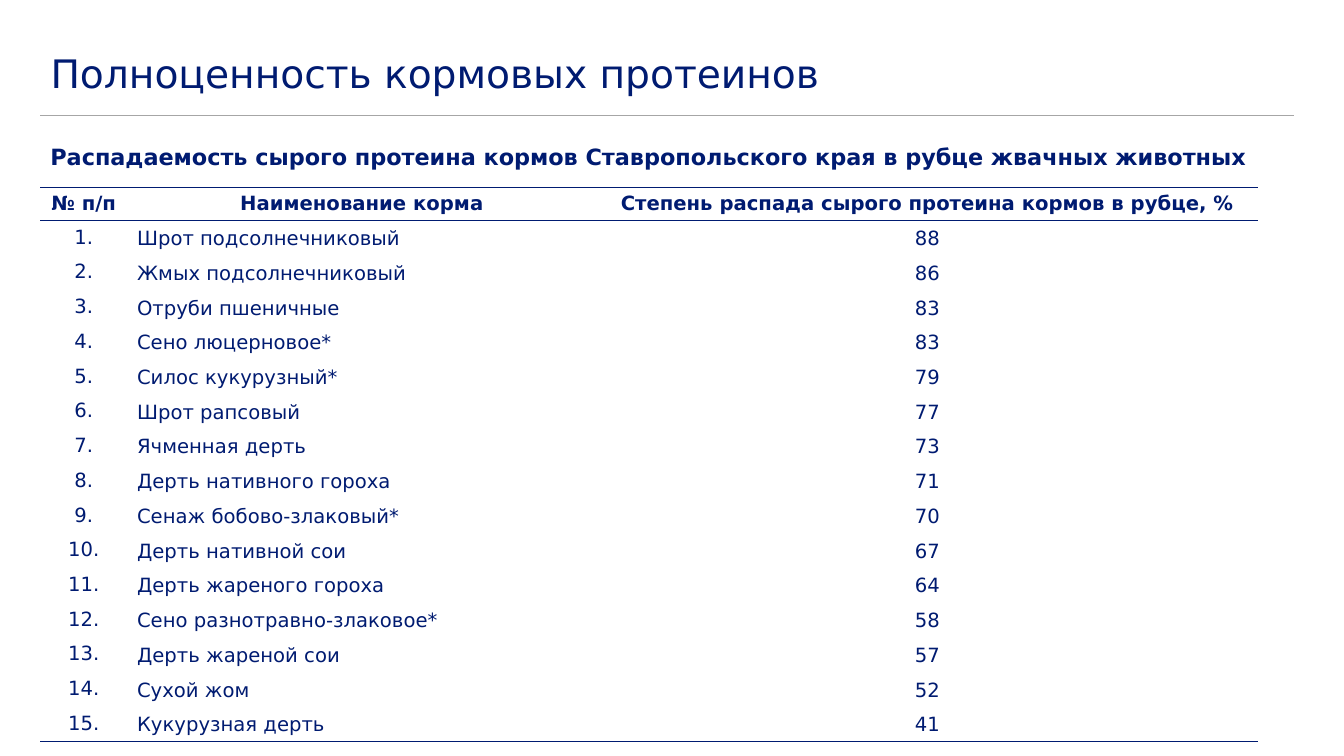
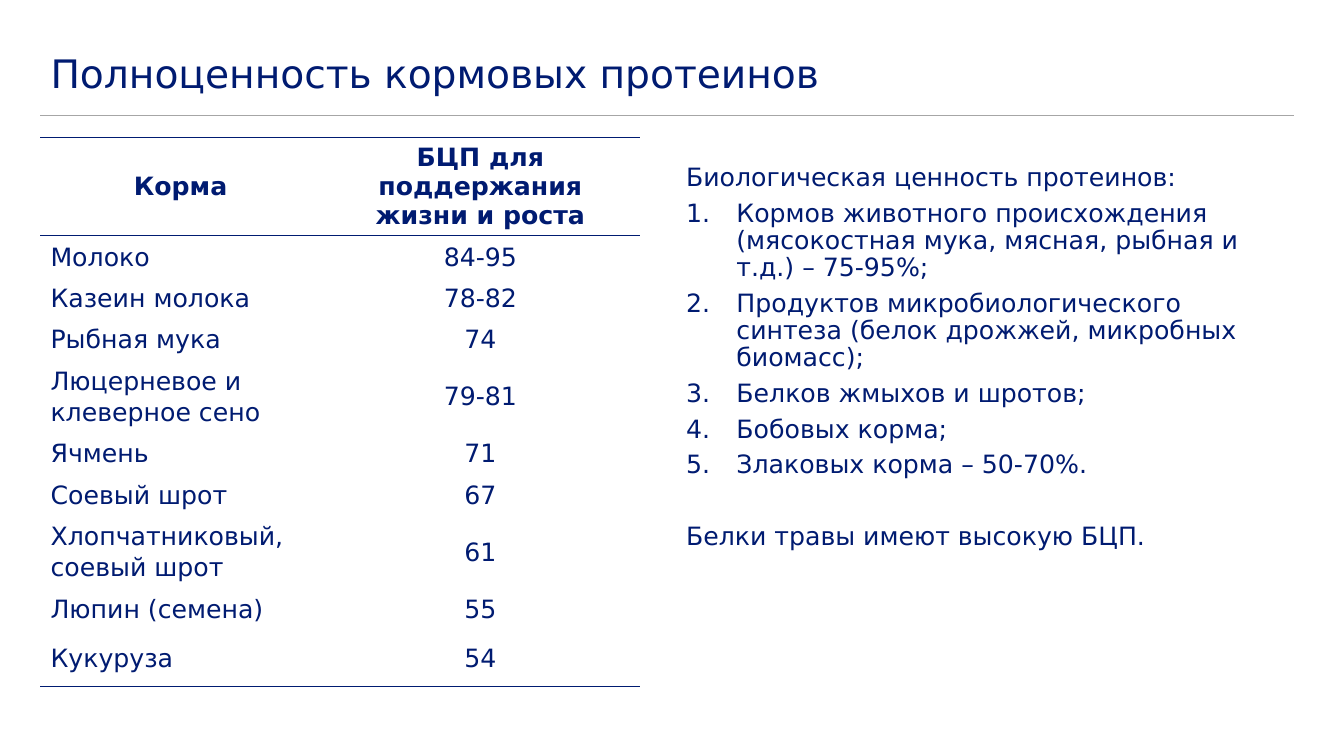
from lxml.etree import SubElement
from pptx import Presentation
from pptx.dml.color import RGBColor
from pptx.enum.shapes import MSO_CONNECTOR, MSO_SHAPE
from pptx.enum.text import MSO_ANCHOR, PP_ALIGN
from pptx.oxml.ns import qn
from pptx.util import Cm, Pt

FONT = "DejaVu Sans"
COLORS = {"navy": "001B71", "rule": "A6A6A6", "panel": "FFFFFF"}
LEFT, WIDTH = 1.02, 31.6
TITLE = "Полноценность кормовых протеинов"
NO_TABLE_STYLE = "{2D5ABB26-0587-4C30-8999-92F81FD0307C}"

SUBTITLE = "Распадаемость сырого протеина кормов Ставропольского края в рубце жвачных животных"
DECAY_HEAD = ("№ п/п", "Наименование корма", "Степень распада сырого протеина кормов в рубце, %")
DECAY = [
    ("Шрот подсолнечниковый", 88),
    ("Жмых подсолнечниковый", 86),
    ("Отруби пшеничные", 83),
    ("Сено люцерновое*", 83),
    ("Силос кукурузный*", 79),
    ("Шрот рапсовый", 77),
    ("Ячменная дерть", 73),
    ("Дерть нативного гороха", 71),
    ("Сенаж бобово-злаковый*", 70),
    ("Дерть нативной сои", 67),
    ("Дерть жареного гороха", 64),
    ("Сено разнотравно-злаковое*", 58),
    ("Дерть жареной сои", 57),
    ("Сухой жом", 52),
    ("Кукурузная дерть", 41),
]

VALUE_HEAD = ("Корма", "БЦП для поддержания жизни и роста")
VALUE = [
    ("Молоко", "84-95"),
    ("Казеин молока", "78-82"),
    ("Рыбная мука", "74"),
    ("Люцерневое и клеверное сено", "79-81"),
    ("Ячмень", "71"),
    ("Соевый шрот", "67"),
    ("Хлопчатниковый, соевый шрот", "61"),
    ("Люпин (семена)", "55"),
    ("Кукуруза", "54"),
]
VALUE_HEIGHTS = [2.45, 1.04, 1.04, 1.04, 1.83, 1.04, 1.04, 1.83, 1.04, 1.45]

RANKING_INTRO = "Биологическая ценность протеинов:"
RANKING = [
    "Кормов животного происхождения (мясокостная мука, мясная, рыбная и т.д.) – 75-95%;",
    "Продуктов микробиологического синтеза (белок дрожжей, микробных биомасс);",
    "Белков жмыхов и шротов;",
    "Бобовых корма;",
    "Злаковых корма – 50-70%.",
]
RANKING_NOTE = "Белки травы имеют высокую БЦП."


def add_run(p, text, size, bold=False):
    r = p.add_run()
    r.text = text
    r.font.name, r.font.size, r.font.bold = FONT, Pt(size), bold
    r.font.color.rgb = RGBColor.from_string(COLORS["navy"])


def add_titled_slide(prs):
    s = prs.slides.add_slide(prs.slide_layouts[5])
    title = s.shapes.title
    title.left, title.top, title.width, title.height = Cm(LEFT), Cm(1.14), Cm(WIDTH), Cm(1.52)
    tf = title.text_frame
    tf.vertical_anchor = MSO_ANCHOR.MIDDLE
    p = tf.paragraphs[0]
    p.alignment, p.line_spacing = PP_ALIGN.LEFT, 0.9
    add_run(p, TITLE, 28)

    rule = s.shapes.add_connector(MSO_CONNECTOR.STRAIGHT, Cm(LEFT), Cm(2.91), Cm(LEFT + WIDTH), Cm(2.91))
    rule.line.color.rgb = RGBColor.from_string(COLORS["rule"])
    rule.line.width = Pt(0.5)
    SubElement(rule._element.spPr, qn("a:effectLst"))
    return s


def add_text_panel(s, left, top, width, height):
    sp = s.shapes.add_shape(MSO_SHAPE.RECTANGLE, Cm(left), Cm(top), Cm(width), Cm(height))
    sp.shadow.inherit = False
    sp.fill.solid()
    sp.fill.fore_color.rgb = RGBColor.from_string(COLORS["panel"])
    sp.line.fill.background()
    tf = sp.text_frame
    tf.word_wrap = True
    tf.vertical_anchor = MSO_ANCHOR.TOP
    return tf


def add_body_paragraph(p, text, size, bold=False):
    p.alignment, p.line_spacing, p.space_after = PP_ALIGN.LEFT, 0.9, Pt(6)
    add_run(p, text, size, bold)


def number_paragraph(p):
    pPr = p._p.get_or_add_pPr()
    pPr.set("marL", str(Cm(1.27)))
    pPr.set("indent", str(-Cm(1.27)))
    SubElement(pPr, qn("a:buFont"), typeface="+mj-lt")
    SubElement(pPr, qn("a:buAutoNum"), type="arabicPeriod")


def add_border(cell, side):
    ln = SubElement(cell._tc.get_or_add_tcPr(), qn(f"a:{side}"), w=str(Pt(1)))
    fill = SubElement(ln, qn("a:solidFill"))
    SubElement(fill, qn("a:srgbClr"), val=COLORS["navy"])


def add_ruled_table(s, top, widths, heights, rows, size, name_col, head_spacing, spacings):
    """Place a table ruled above and below its head and at its foot; name_col is left-aligned."""
    frame = s.shapes.add_table(len(rows), len(widths), Cm(LEFT), Cm(top),
                               Cm(sum(widths)), Cm(sum(heights)))
    table = frame.table
    table.horz_banding = False
    table._tbl.tblPr.find(qn("a:tableStyleId")).text = NO_TABLE_STYLE
    for column, width in zip(table.columns, widths):
        column.width = Cm(width)
    for i, (row, height) in enumerate(zip(rows, heights)):
        table.rows[i].height = Cm(height)
        head, last = i == 0, i == len(rows) - 1
        for j, value in enumerate(row):
            cell = table.cell(i, j)
            cell.vertical_anchor = MSO_ANCHOR.MIDDLE
            if head:
                add_border(cell, "lnT")
            if head or last:
                add_border(cell, "lnB")
            cell.fill.background()
            p = cell.text_frame.paragraphs[0]
            p.alignment = PP_ALIGN.LEFT if j == name_col and not head else PP_ALIGN.CENTER
            p.line_spacing = head_spacing if head else spacings[j]
            add_run(p, str(value), size, head)


def add_ranking(s, left, top, width, height):
    tf = add_text_panel(s, left, top, width, height)
    add_body_paragraph(tf.paragraphs[0], RANKING_INTRO, 18)
    for text in RANKING:
        p = tf.add_paragraph()
        add_body_paragraph(p, text, 18)
        number_paragraph(p)
    p = tf.add_paragraph()
    add_body_paragraph(p, RANKING_NOTE, 18)
    p.space_before = Pt(25.5)


def build_decay_slide(prs):
    s = add_titled_slide(prs)
    rows = [DECAY_HEAD] + [(f"{n}.", *feed) for n, feed in enumerate(DECAY, 1)]
    add_ruled_table(s, 4.72, [2.18, 11.84, 16.66], [0.84] + [0.87] * len(DECAY), rows,
                    size=14, name_col=1, head_spacing=0.9, spacings=[0.9, 1.07, 1.07])
    tf = add_text_panel(s, LEFT, 3.56, WIDTH, 0.84)
    add_body_paragraph(tf.paragraphs[0], SUBTITLE, 16, bold=True)


def build_value_slide(prs):
    s = add_titled_slide(prs)
    add_ruled_table(s, 3.47, [7.06, 8.05], VALUE_HEIGHTS, [VALUE_HEAD] + VALUE,
                    size=18, name_col=0, head_spacing=1.0, spacings=[1.07, 1.07])
    add_ranking(s, 17.04, 4.03, 15.6, 12.88)


def main():
    prs = Presentation()
    prs.slide_width, prs.slide_height = Cm(33.87), Cm(19.05)
    build_decay_slide(prs)
    build_value_slide(prs)
    prs.save("out.pptx")


if __name__ == "__main__":
    main()
